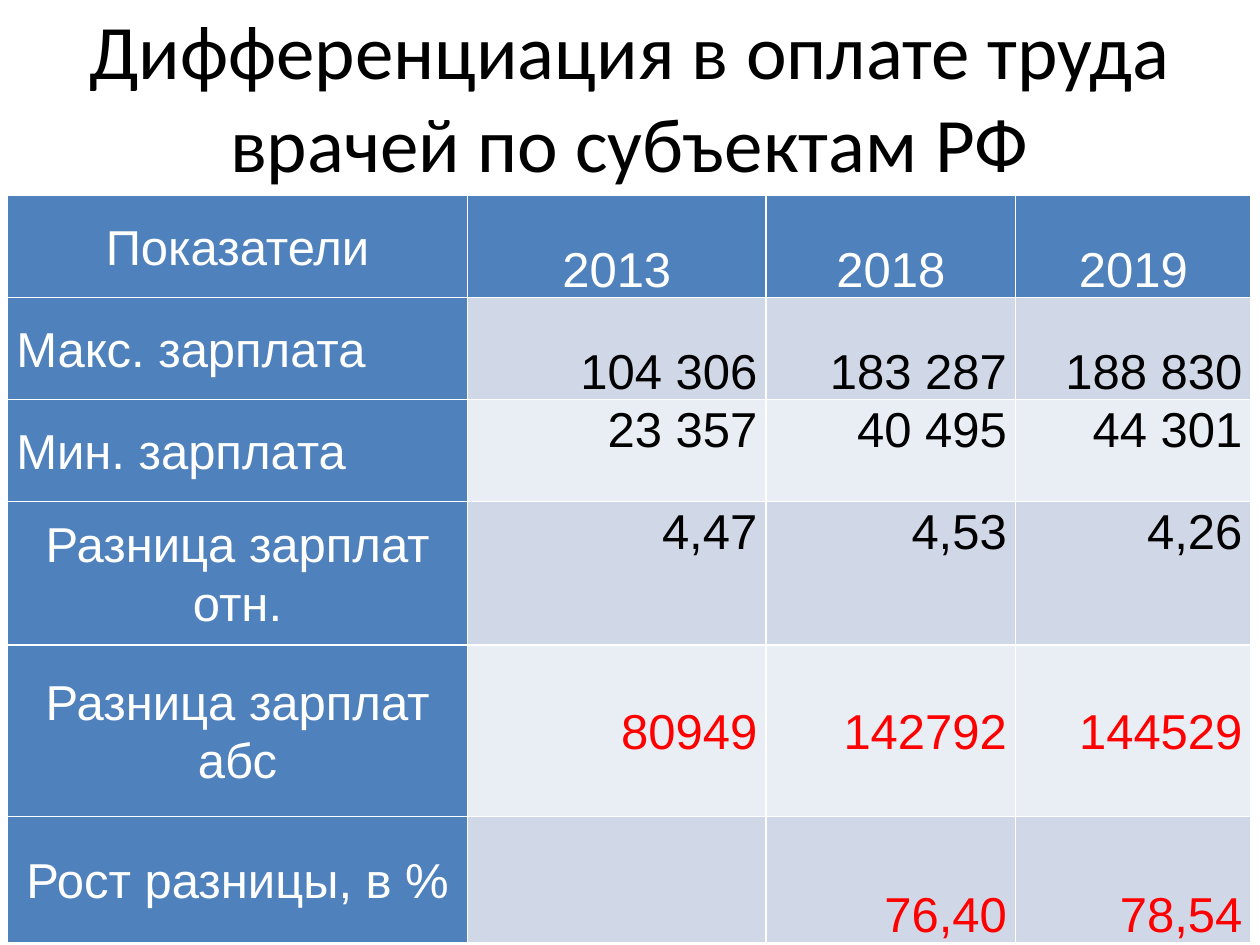
from pptx import Presentation
from pptx.dml.color import RGBColor
from pptx.enum.text import MSO_ANCHOR, PP_ALIGN
from pptx.util import Inches, Pt

COLORS = {
    "black": "000000",
    "white": "FFFFFF",
    "red": "FF0000",
    "header": "4F81BD",
    "band_dark": "D0D8E8",
    "band_light": "E9EDF4",
}

TITLE = "Дифференциация в оплате труда врачей по субъектам РФ"
HEADINGS = ["Показатели", "2013", "2018", "2019"]

# Indicator, its alignment, yearly values, their anchor and colour
INDICATORS = [
    ("Макс. зарплата", PP_ALIGN.LEFT, ["104 306", "183 287", "188 830"], MSO_ANCHOR.BOTTOM, "black"),
    ("Мин. зарплата", PP_ALIGN.LEFT, ["23 357", "40 495", "44 301"], MSO_ANCHOR.TOP, "black"),
    ("Разница зарплат отн.", PP_ALIGN.CENTER, ["4,47", "4,53", "4,26"], MSO_ANCHOR.TOP, "black"),
    ("Разница зарплат абс", PP_ALIGN.CENTER, ["80949", "142792", "144529"], MSO_ANCHOR.MIDDLE, "red"),
    ("Рост разницы, в %", PP_ALIGN.CENTER, ["", "76,40", "78,54"], MSO_ANCHOR.BOTTOM, "red"),
]

COLUMN_WIDTHS = [3.65, 2.37, 1.98, 1.87]
ROW_HEIGHTS = [0.81, 0.81, 0.81, 1.14, 1.36, 1]

TITLE_FONT = {"name": "Calibri", "size": Pt(44)}
TABLE_FONT = {"name": "Arial", "size": Pt(28), "bold": False}
CELL_FORMAT = {
    "margin_left": Inches(0.07),
    "margin_right": Inches(0.07),
    "margin_top": 0,
    "margin_bottom": 0,
}


def apply_format(target, values):
    for name, value in values.items():
        setattr(target, name, value)


def write_text(paragraph, text, font, color, align):
    paragraph.alignment = align
    run = paragraph.add_run()
    run.text = text
    apply_format(run.font, font)
    run.font.color.rgb = RGBColor.from_string(COLORS[color])


def add_title(slide):
    title = slide.shapes.add_textbox(Inches(0.5), Inches(0.13), Inches(9), Inches(1.25))
    frame = title.text_frame
    apply_format(frame, {"word_wrap": True, "vertical_anchor": MSO_ANCHOR.MIDDLE})
    write_text(frame.paragraphs[0], TITLE, TITLE_FONT, "black", PP_ALIGN.CENTER)


def fill_cell(cell, text, fill, color, align, anchor):
    cell.fill.solid()
    cell.fill.fore_color.rgb = RGBColor.from_string(COLORS[fill])
    apply_format(cell, CELL_FORMAT)
    cell.vertical_anchor = anchor
    if text:
        paragraph = cell.text_frame.paragraphs[0]
        paragraph.line_spacing = 1.07
        write_text(paragraph, text, TABLE_FONT, color, align)


def add_salary_table(slide):
    salaries = slide.shapes.add_table(
        len(ROW_HEIGHTS), len(COLUMN_WIDTHS),
        Inches(0.06), Inches(1.55),
        Inches(sum(COLUMN_WIDTHS)), Inches(sum(ROW_HEIGHTS)),
    ).table
    salaries.first_col = True
    for column, width in zip(salaries.columns, COLUMN_WIDTHS):
        column.width = Inches(width)
    for row, height in zip(salaries.rows, ROW_HEIGHTS):
        row.height = Inches(height)

    # Heading row
    for index, heading in enumerate(HEADINGS):
        anchor = MSO_ANCHOR.BOTTOM if index else MSO_ANCHOR.MIDDLE
        fill_cell(salaries.cell(0, index), heading, "header", "white", PP_ALIGN.CENTER, anchor)

    # Indicator rows with alternating bands
    for row, (indicator, align, values, anchor, color) in enumerate(INDICATORS, start=1):
        band = "band_dark" if row % 2 else "band_light"
        fill_cell(salaries.cell(row, 0), indicator, "header", "white", align, MSO_ANCHOR.MIDDLE)
        for column, value in enumerate(values, start=1):
            fill_cell(salaries.cell(row, column), value, band, color, PP_ALIGN.RIGHT, anchor)


def main():
    presentation = Presentation()
    presentation.slide_width = Inches(10)
    presentation.slide_height = Inches(7.5)
    slide = presentation.slides.add_slide(presentation.slide_layouts[6])
    add_title(slide)
    add_salary_table(slide)
    presentation.save("out.pptx")


if __name__ == "__main__":
    main()
